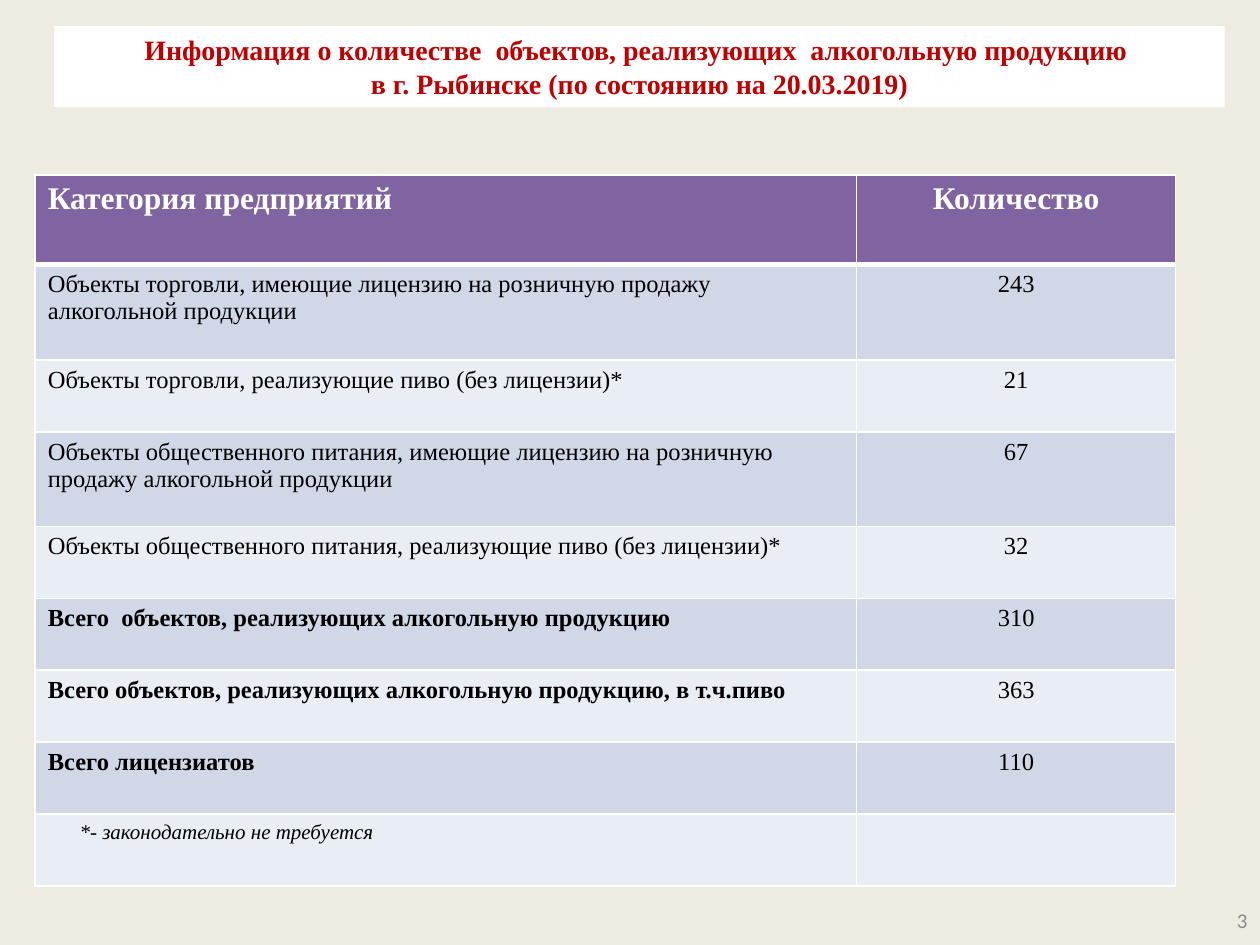
from lxml.etree import SubElement
from pptx import Presentation
from pptx.dml.color import RGBColor
from pptx.enum.shapes import MSO_SHAPE
from pptx.enum.text import MSO_ANCHOR, PP_ALIGN
from pptx.oxml.ns import qn
from pptx.util import Cm, Pt

SERIF = "Times New Roman"
HEADER_FILL = "8064A2"
BAND_FILLS = ["E9EDF4", "D0D8E8"]
COLUMN_WIDTHS = [16.56, 6.43]
ROW_HEIGHTS = [1.8, 1.93, 1.45, 1.9] + [1.45] * 5
HEADINGS = ("Категория предприятий", "Количество")
CATEGORIES = [
    ("Объекты торговли, имеющие лицензию на розничную продажу алкогольной продукции", "243"),
    ("Объекты торговли, реализующие пиво (без лицензии)*", "21"),
    ("Объекты общественного питания, имеющие лицензию на розничную продажу алкогольной продукции", "67"),
    ("Объекты общественного питания, реализующие пиво (без лицензии)*", "32"),
]
TOTALS = [
    ("Всего  объектов, реализующих алкогольную продукцию", "310"),
    ("Всего объектов, реализующих алкогольную продукцию, в т.ч.пиво", "363"),
    ("Всего лицензиатов", "110"),
]
FOOTNOTE = ("*- законодательно не требуется", "")


def color(value):
    return RGBColor.from_string(value)


def paint(target, value):
    target.fill.solid()
    target.fill.fore_color.rgb = color(value)


def write(frame, text, size, ink="000000", font=SERIF, align=PP_ALIGN.LEFT, bold=False, italic=False):
    frame.text = text
    for paragraph in frame.paragraphs:
        paragraph.alignment = align
        for run in paragraph.runs:
            run.font.name = font
            run.font.size = Pt(size)
            run.font.bold = bold
            run.font.italic = italic
            run.font.color.rgb = color(ink)


def add_title(slide, text):
    banner = slide.shapes.add_shape(MSO_SHAPE.RECTANGLE, Cm(1.09), Cm(0.53), Cm(23.6), Cm(1.63))
    banner.shadow.inherit = False
    paint(banner, "FFFFFF")
    banner.line.fill.background()
    banner.text_frame.word_wrap = True
    banner.text_frame.vertical_anchor = MSO_ANCHOR.TOP
    write(banner.text_frame, text, 16, "C00000", align=PP_ALIGN.CENTER, bold=True)


def add_page_number(slide, number):
    corner = slide.shapes.add_textbox(Cm(19.48), Cm(18.03), Cm(5.92), Cm(1.02))
    corner.text_frame.word_wrap = True
    corner.text_frame.vertical_anchor = MSO_ANCHOR.MIDDLE
    write(corner.text_frame, number, 12, "8C8C8C", "Calibri", PP_ALIGN.RIGHT)


def set_borders(cell, bottom):
    properties = cell._tc.get_or_add_tcPr()
    for side, width in (("L", 1), ("R", 1), ("T", 1), ("B", bottom)):
        border = SubElement(properties, qn(f"a:ln{side}"), w=str(Pt(width)))
        SubElement(SubElement(border, qn("a:solidFill")), qn("a:srgbClr"), val="FFFFFF")


def fill_row(table, row, texts, background, size, bottom=1, bold_columns=(), **style):
    for column, text in enumerate(texts):
        cell = table.cell(row, column)
        set_borders(cell, bottom)
        paint(cell, background)
        align = PP_ALIGN.CENTER if column else PP_ALIGN.LEFT
        write(cell.text_frame, text, size, align=align, bold=column in bold_columns, **style)


def add_outlet_table(slide):
    table = slide.shapes.add_table(
        len(ROW_HEIGHTS), len(COLUMN_WIDTHS),
        Cm(0.71), Cm(3.53), Cm(sum(COLUMN_WIDTHS)), Cm(sum(ROW_HEIGHTS)),
    ).table
    for column, width in zip(table.columns, COLUMN_WIDTHS):
        column.width = Cm(width)
    for row, height in zip(table.rows, ROW_HEIGHTS):
        row.height = Cm(height)

    fill_row(table, 0, HEADINGS, HEADER_FILL, 18, bottom=3, bold_columns=(0, 1), ink="FFFFFF")
    for row, texts in enumerate(CATEGORIES + TOTALS, start=1):
        bold_columns = (0,) if texts in TOTALS else ()
        fill_row(table, row, texts, BAND_FILLS[row % 2], 14, bold_columns=bold_columns)

    last = len(ROW_HEIGHTS) - 1
    fill_row(table, last, FOOTNOTE, BAND_FILLS[last % 2], 12, italic=True)
    note = table.cell(last, 0).text_frame.paragraphs[0]
    note._p.get_or_add_pPr().set("marL", str(Cm(0.64)))


def main():
    deck = Presentation()
    deck.slide_width, deck.slide_height = Cm(25.4), Cm(19.05)
    slide = deck.slides.add_slide(deck.slide_layouts[6])
    paint(slide.background, "EEECE1")
    add_page_number(slide, "3")
    add_title(
        slide,
        "Информация о количестве  объектов, реализующих  алкогольную продукцию \n"
        "в г. Рыбинске (по состоянию на 20.03.2019)",
    )
    add_outlet_table(slide)
    deck.save("out.pptx")


if __name__ == "__main__":
    main()
